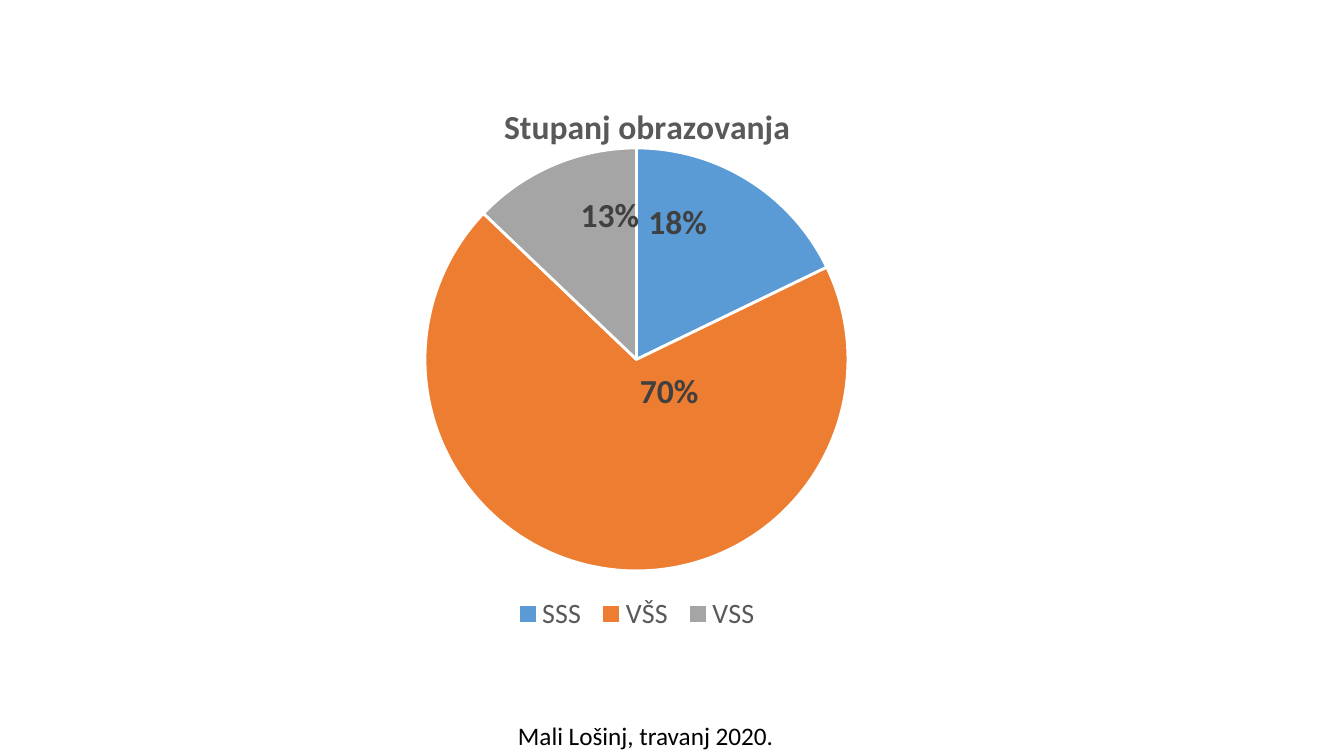
from lxml import etree
from pptx import Presentation
from pptx.chart.data import CategoryChartData
from pptx.dml.color import RGBColor
from pptx.enum.chart import XL_CHART_TYPE, XL_LABEL_POSITION, XL_LEGEND_POSITION
from pptx.enum.text import MSO_AUTO_SIZE
from pptx.oxml.ns import qn
from pptx.util import Pt

PIE = XL_CHART_TYPE.PIE
CENTER = XL_LABEL_POSITION.CENTER
BOTTOM = XL_LEGEND_POSITION.BOTTOM
FIT_SHAPE = MSO_AUTO_SIZE.SHAPE_TO_FIT_TEXT

BLACK = RGBColor(0x00, 0x00, 0x00)
WHITE = RGBColor(0xFF, 0xFF, 0xFF)
GRAY = RGBColor(0x59, 0x59, 0x59)
DARK = RGBColor(0x40, 0x40, 0x40)
BLUE = RGBColor(0x5B, 0x9B, 0xD5)
ORANGE = RGBColor(0xED, 0x7D, 0x31)
SILVER = RGBColor(0xA5, 0xA5, 0xA5)

EMU_PER_PX = 914400 / 100.8
PERCENT = '0"%"'

EDUCATION = [
    ("SSS", 18, BLUE, (-15, -46)),
    ("VŠS", 70, ORANGE, (49, -71)),
    ("VSS", 13, SILVER, (15, -46)),
]


class SlideBuilder:
    """Holds the style and the current slide, and adds elements to it."""

    font_name = "Calibri"

    def __init__(self, prs):
        self.slide = prs.slides.add_slide(prs.slide_layouts[6])

    def px(self, *lengths):
        return [round(n * EMU_PER_PX) for n in lengths]

    def style(self, font, size, color, bold=False):
        font.color.rgb = color
        fmt = {"name": self.font_name, "size": Pt(size), "bold": bold}
        for key, value in fmt.items():
            setattr(font, key, value)

    def layout(self, parent, index, size, lengths, **modes):
        for old in parent.findall(qn("c:layout")):
            parent.remove(old)
        layout = etree.Element(qn("c:layout"))
        manual = etree.SubElement(layout, qn("c:manualLayout"))
        shares = {tag: n / whole for tag, n, whole in zip("xywh", lengths, size * 2)}
        for tag, value in {**modes, **shares}.items():
            etree.SubElement(manual, qn(f"c:{tag}")).set("val", str(value))
        parent.insert(index, layout)

    def text(self, box, text, size, color):
        sp = self.slide.shapes.add_textbox(*self.px(*box))
        tf = sp.text_frame
        tf.word_wrap = False
        tf.auto_size = FIT_SHAPE
        r = tf.paragraphs[0].add_run()
        r.text = text
        self.style(r.font, size, color)

    def pie(self, box, title, rows):
        data = CategoryChartData()
        data.categories = [row[0] for row in rows]
        data.add_series("Series 1", [row[1] for row in rows])
        chart = self.slide.shapes.add_chart(PIE, *self.px(*box), data).chart
        self.style(chart.font, 10, BLACK)
        self.title(chart, title)
        self.legend(chart)
        plot = chart.plots[0]
        plot.vary_by_categories = True
        size = box[2:]
        edge = {"xMode": "edge", "yMode": "edge"}
        parts = [
            ("c:title", 1, (389, 16), edge),
            ("c:plotArea", 0, (5, 66, 1045, 423), {"layoutTarget": "inner", **edge}),
            ("c:legend", 1, (398, 510, 260, 44), edge),
        ]
        for tag, index, lengths, modes in parts:
            part = chart.element.find(".//" + qn(tag))
            self.layout(part, index, size, lengths, **modes)
        self.slices(plot.series[0], rows, size)

    def title(self, chart, text):
        chart.has_title = True
        p = chart.chart_title.text_frame.paragraphs[0]
        r = p.add_run()
        r.text = text
        self.style(r.font, 24, GRAY, True)

    def legend(self, chart):
        chart.has_legend = True
        chart.legend.position = BOTTOM
        chart.legend.include_in_layout = False
        self.style(chart.legend.font, 20, GRAY)

    def slices(self, series, rows, size):
        labels = series.data_labels
        fmt = {"number_format": PERCENT, "number_format_is_linked": False,
               "show_value": True, "position": CENTER}
        for key, value in fmt.items():
            setattr(labels, key, value)
        self.style(labels.font, 24, DARK, True)
        for i, (_, _, color, _) in enumerate(rows):
            point = series.points[i]
            point.format.fill.solid()
            point.format.fill.fore_color.rgb = color
            point.format.line.color.rgb = WHITE
            point.format.line.width = Pt(2)
            self.style(point.data_label.font, 24, DARK, True)
            point.data_label.position = CENTER
        tags = labels._element.findall(qn("c:dLbl"))
        for label, (_, _, _, offset) in zip(tags, rows):
            self.layout(label, 1, size, offset)
            number = etree.Element(qn("c:numFmt"))
            number.set("formatCode", PERCENT)
            number.set("sourceLinked", "0")
            label.insert(2, number)


def main():
    prs = Presentation()
    prs.slide_width, prs.slide_height = (round(n * EMU_PER_PX) for n in (1344, 756))
    s = SlideBuilder(prs)
    s.pie((109, 82, 1076, 562), "Stupanj obrazovanja", EDUCATION)
    s.text((508, 715, 278, 40), "Mali Lošinj, travanj 2020.", 18, BLACK)
    prs.save("out.pptx")


if __name__ == "__main__":
    main()
